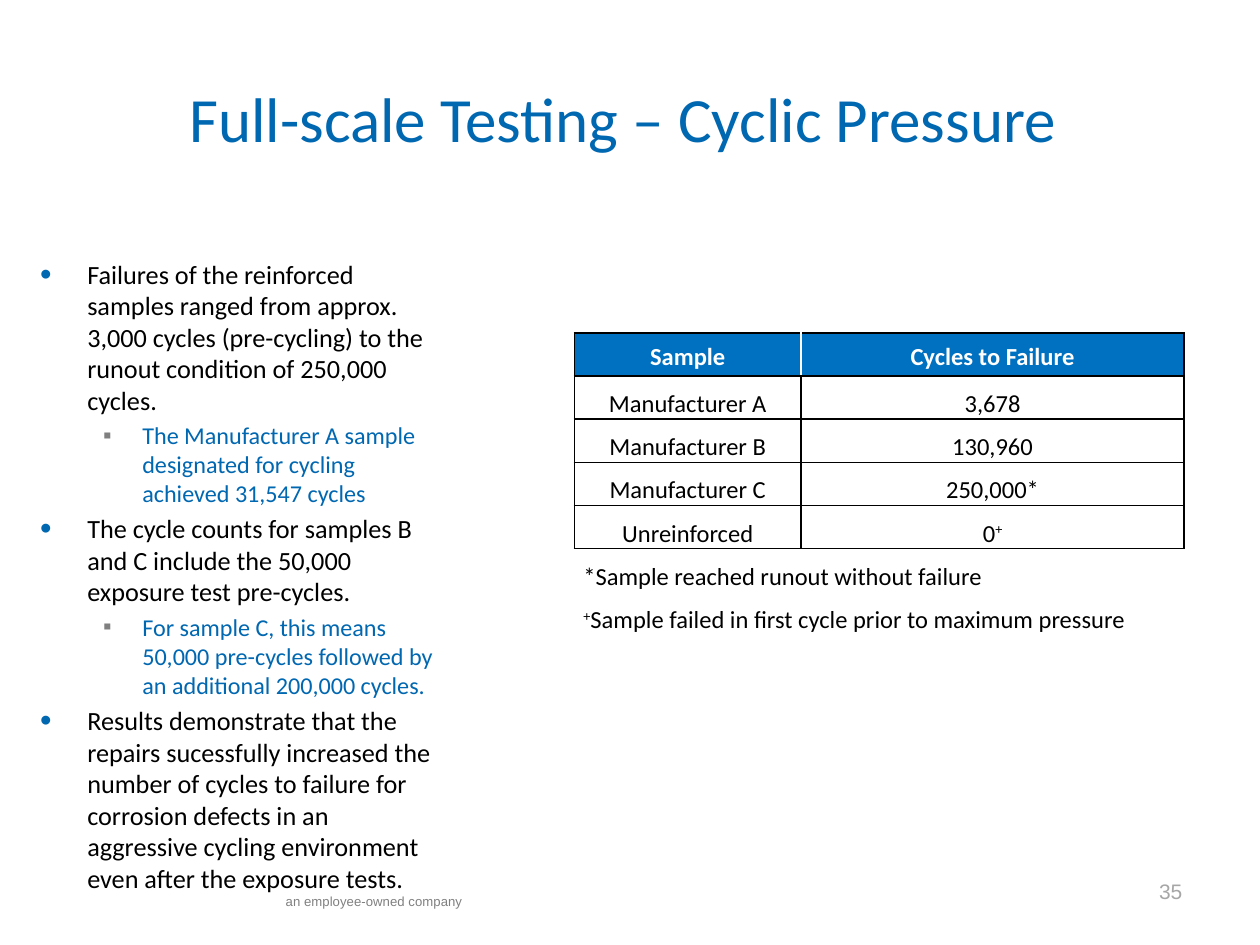
"""Build the slide on full-scale cyclic pressure testing."""
from dataclasses import dataclass

import pptx
import pptx.dml.color
import pptx.enum.text
import pptx.oxml.ns
import pptx.util
from lxml import etree

Cm = pptx.util.Cm
Pt = pptx.util.Pt
Color = pptx.dml.color.RGBColor
Align = pptx.enum.text.PP_ALIGN
Anchor = pptx.enum.text.MSO_ANCHOR
qn = pptx.oxml.ns.qn

BLUE = Color(0x00, 0x67, 0xB1)
HEAD = Color(0x00, 0x70, 0xC0)
BLACK = Color(0x00, 0x00, 0x00)
WHITE = Color(0xFF, 0xFF, 0xFF)
GRAY = Color(0x80, 0x80, 0x80)
PALE = Color(0xA6, 0xA6, 0xA6)


@dataclass(frozen=True)
class Label:
    text: str
    left: float
    top: float
    width: float
    height: float
    size: float
    color: Color
    font: str = "Arial"
    align: Align = Align.CENTER
    anchor: Anchor = Anchor.TOP


@dataclass(frozen=True)
class Level:
    left: float
    hang: float
    mark: str
    tint: Color
    scale: int
    size: float
    color: Color


@dataclass(frozen=True)
class Point:
    text: str
    depth: int


LABELS = [
    Label("35", 22.43, 17.58, 2.34, 0.76, 12, PALE),
    Label("an employee-owned company", 5.51, 17.88, 4.45, 0.58, 7.5, GRAY, align=Align.LEFT),
    Label("Full-scale Testing – Cyclic Pressure ", 1.27, 1.27, 22.86, 2.21, 36, BLUE,
          font="Calibri", anchor=Anchor.MIDDLE),
]
LEVELS = [
    Level(0.95, 0.95, "•", BLUE, 125, 15, BLACK),
    Level(2.06, 0.79, "▪", GRAY, 100, 13.8, BLUE),
]
POINTS = [
    Point("Failures of the reinforced samples ranged from approx. 3,000 cycles (pre-cycling) "
          "to the runout condition of 250,000 cycles.", 0),
    Point("The Manufacturer A sample designated for cycling achieved 31,547 cycles", 1),
    Point("The cycle counts for samples B and C include the 50,000 exposure test pre-cycles.", 0),
    Point("For sample C, this means 50,000 pre-cycles followed by an additional "
          "200,000 cycles.", 1),
    Point("Results demonstrate that the repairs sucessfully increased the number of cycles to "
          "failure for corrosion defects in an aggressive cycling environment even after the "
          "exposure tests.", 0),
]
ROWS = [
    ("Sample", "Cycles to Failure"),
    ("Manufacturer A", "3,678"),
    ("Manufacturer B", "130,960"),
    ("Manufacturer C", "250,000*"),
    ("Unreinforced", "0+"),
    ("*Sample reached runout without failure",),
    ("+Sample failed in first cycle prior to maximum pressure",),
]
WIDTHS = [4.57, 7.72]
PITCH = 0.87


def write(para, text: str, *, size: float, color: Color, font: str = "Calibri",
          bold: bool = False, raised: bool = False) -> None:
    """Add a run of text in the given format."""
    run = para.add_run()
    run.text = text
    run.font.size = Pt(size)
    run.font.name = font
    run.font.bold = bold
    run.font.color.rgb = color
    if raised:
        run.font._element.set("baseline", "30000")


def add_box(slide, left: float, top: float, width: float, height: float,
            anchor: Anchor = Anchor.TOP):
    """Add a wrapped text box and return its frame."""
    frame = slide.shapes.add_textbox(Cm(left), Cm(top), Cm(width), Cm(height)).text_frame
    frame.word_wrap = True
    frame.vertical_anchor = anchor
    return frame


def add_label(slide, label: Label) -> None:
    """Draw a single line of text."""
    frame = add_box(slide, label.left, label.top, label.width, label.height, label.anchor)
    para = frame.paragraphs[0]
    para.alignment = label.align
    write(para, label.text, size=label.size, color=label.color, font=label.font)


def add_mark(para, level: Level) -> None:
    """Give a paragraph its bullet and hanging indent."""
    props = para._p.get_or_add_pPr()
    props.set("marL", str(Cm(level.left)))
    props.set("indent", str(-Cm(level.hang)))
    tint = etree.SubElement(props, qn("a:buClr"))
    etree.SubElement(tint, qn("a:srgbClr"), val=str(level.tint))
    etree.SubElement(props, qn("a:buSzPct"), val=str(level.scale * 1000))
    etree.SubElement(props, qn("a:buFont"), typeface="Arial")
    etree.SubElement(props, qn("a:buChar"), char=level.mark)


def add_points(slide, points: list[Point]) -> None:
    """Draw the bulleted text."""
    frame = add_box(slide, 0.56, 5.08, 8.61, 11.23)
    for index, point in enumerate(points):
        para = frame.add_paragraph() if index else frame.paragraphs[0]
        level = LEVELS[point.depth]
        add_mark(para, level)
        para.level = point.depth
        if index:
            para.space_before = Pt(round(level.size * 0.2, 1))
        write(para, point.text, size=level.size, color=level.color)


def set_edges(cell, edges: dict[str, Color]) -> None:
    """Draw the named cell edges and clear the others."""
    props = cell._tc.get_or_add_tcPr()
    for side in "LRTB":
        line = etree.SubElement(props, qn(f"a:ln{side}"), w=str(Pt(1)))
        if side in edges:
            fill = etree.SubElement(line, qn("a:solidFill"))
            etree.SubElement(fill, qn("a:srgbClr"), val=str(edges[side]))
        else:
            etree.SubElement(line, qn("a:noFill"))


def fill_cell(cell, text: str, head: bool, note: bool) -> None:
    """Write the text of a cell, raising each plus sign."""
    cell.vertical_anchor = Anchor.MIDDLE if head else Anchor.BOTTOM
    cell.margin_left = cell.margin_right = Cm(0.18)
    cell.margin_top = cell.margin_bottom = 0
    para = cell.text_frame.paragraphs[0]
    para.alignment = Align.LEFT if note else Align.CENTER
    para.line_spacing = 1.15
    before, plus, after = text.partition("+")
    for part in filter(None, (before, plus, after)):
        write(para, part, size=14, color=WHITE if head else BLACK, bold=head,
              raised=part == "+")


def add_grid(slide, rows: list[tuple[str, ...]]) -> None:
    """Draw the table of results with its notes."""
    table = slide.shapes.add_table(len(rows), len(WIDTHS), Cm(11.58), Cm(6.71),
                                   Cm(sum(WIDTHS)), Cm(PITCH * len(rows))).table
    table.first_row = table.horz_banding = False
    for column, width in zip(table.columns, WIDTHS):
        column.width = Cm(width)
    for r, texts in enumerate(rows):
        table.rows[r].height = Cm(PITCH)
        head, note = r == 0, len(texts) == 1
        for c in range(len(WIDTHS)):
            cell = table.cell(r, c)
            edges = {} if note else dict.fromkeys("LRTB", BLACK)
            if head:
                edges["L" if c else "R"] = WHITE
            if note and len(rows[r - 1]) > 1:
                edges["T"] = BLACK
            set_edges(cell, edges)
            if head:
                cell.fill.solid()
                cell.fill.fore_color.rgb = HEAD
            else:
                cell.fill.background()
            if c < len(texts):
                fill_cell(cell, texts[c], head, note)
        if note:
            table.cell(r, 0).merge(table.cell(r, len(WIDTHS) - 1))


def main() -> None:
    """Build and save the slide."""
    deck = pptx.Presentation()
    deck.slide_width, deck.slide_height = Cm(25.4), Cm(19.05)
    slide = deck.slides.add_slide(deck.slide_layouts[6])
    for label in LABELS:
        add_label(slide, label)
    add_points(slide, POINTS)
    add_grid(slide, ROWS)
    deck.save("out.pptx")


if __name__ == "__main__":
    main()
